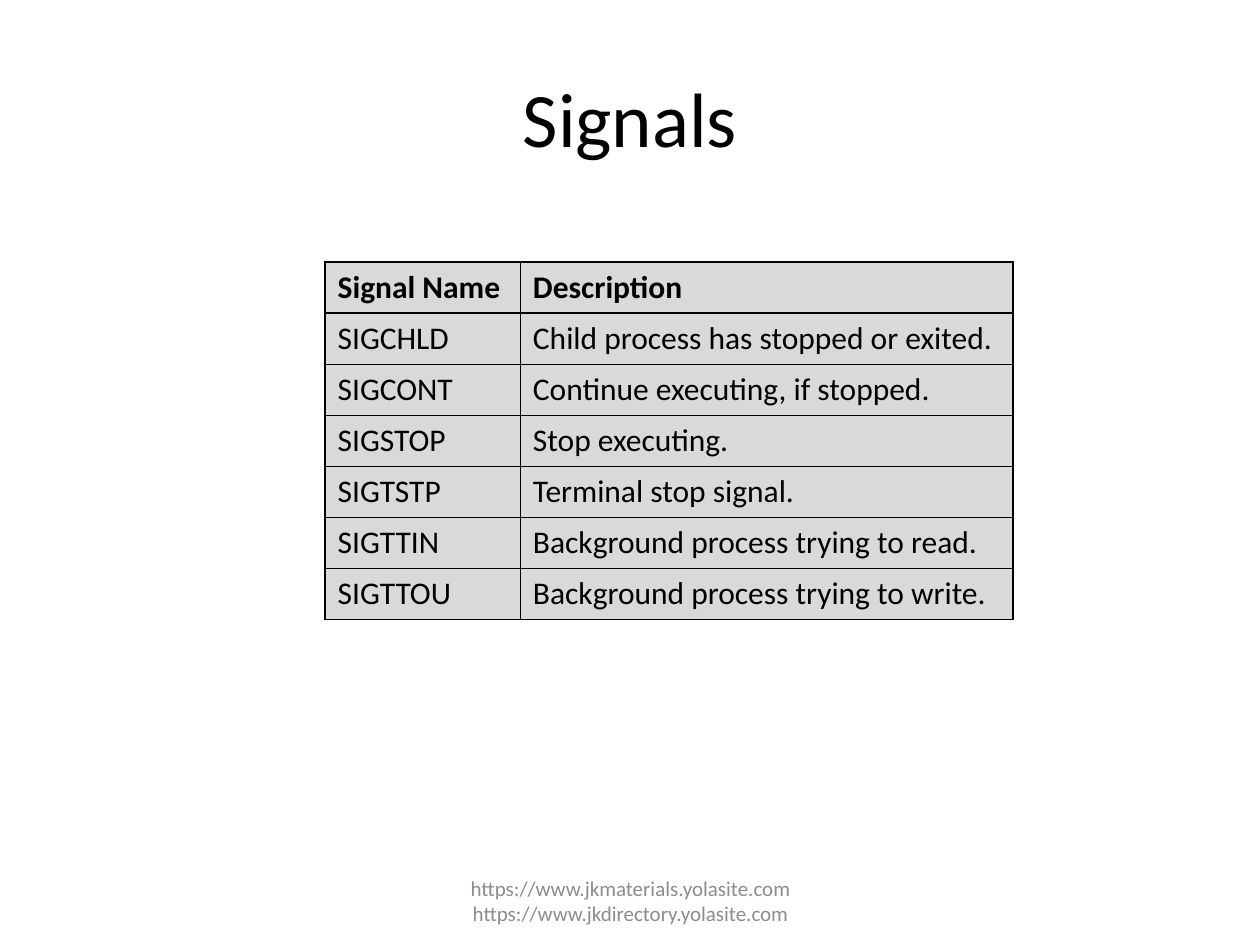
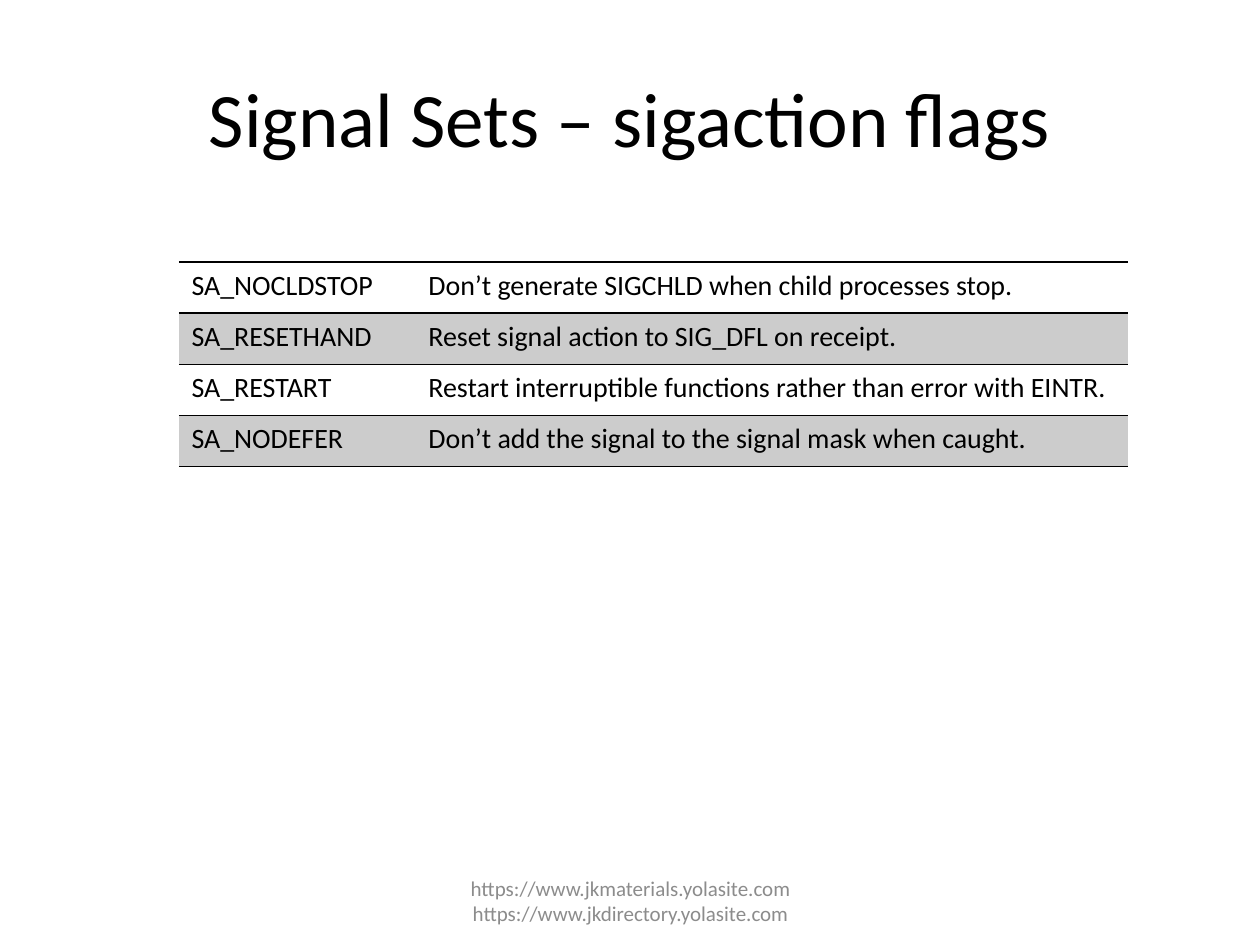
from lxml.etree import SubElement
from pptx import Presentation
from pptx.dml.color import RGBColor
from pptx.enum.text import MSO_ANCHOR, PP_ALIGN
from pptx.oxml.ns import qn
from pptx.util import Inches, Pt

WIDTH, HEIGHT = Inches(10), Inches(7.5)
FONT = "Calibri"
BLACK = RGBColor(0x00, 0x00, 0x00)
FOOTER_GREY = RGBColor(0x8C, 0x8C, 0x8C)
CELL_GREY = RGBColor(0xD9, 0xD9, 0xD9)
BAND_GREY = RGBColor(0xCC, 0xCC, 0xCC)

TITLE_BOX = (5, 4, 90, 16.67)
FOOTER_BOX = (34.2, 92.67, 31.7, 5.33)
TABLE_TOP = 27.73
ROW_HEIGHT = 5.41
FOOTER = "https://www.jkmaterials.yolasite.com https://www.jkdirectory.yolasite.com"

SIGNALS = [
    ("Signal Name", "Description"),
    ("SIGCHLD", "Child process has stopped or exited."),
    ("SIGCONT", "Continue executing, if stopped."),
    ("SIGSTOP", "Stop executing."),
    ("SIGTSTP", "Terminal stop signal."),
    ("SIGTTIN", "Background process trying to read."),
    ("SIGTTOU", "Background process trying to write."),
]
FLAGS = [
    ("SA_NOCLDSTOP", "Don’t generate SIGCHLD when child processes stop."),
    ("SA_RESETHAND", "Reset signal action to SIG_DFL on receipt."),
    ("SA_RESTART", "Restart interruptible functions rather than error with EINTR."),
    ("SA_NODEFER", "Don’t add the signal to the signal mask when caught."),
]


def across(percent):
    """Return a share of the slide width."""
    return int(WIDTH * percent / 100)


def down(percent):
    """Return a share of the slide height."""
    return int(HEIGHT * percent / 100)


def place(box):
    """Turn left, top, width and height in percent into lengths."""
    left, top, width, height = box
    return across(left), down(top), across(width), down(height)


def write(tf, text, size, color=BLACK, bold=False, align=PP_ALIGN.LEFT):
    """Write one formatted run into the first paragraph."""
    p = tf.paragraphs[0]
    p.alignment = align
    r = p.add_run()
    r.text = text
    r.font.name = FONT
    r.font.size = Pt(size)
    r.font.bold = bold
    r.font.color.rgb = color


def set_borders(cell, **widths):
    """Draw the cell edges L, R, T and B; a width of 0 hides an edge."""
    tc_pr = cell._tc.get_or_add_tcPr()
    for edge in "LRTB":
        width = widths[edge]
        ln = SubElement(tc_pr, qn(f"a:ln{edge}"), w=str(Pt(width)))
        if width:
            fill = SubElement(ln, qn("a:solidFill"))
            SubElement(fill, qn("a:srgbClr"), val=str(BLACK))
        else:
            SubElement(ln, qn("a:noFill"))


def add_slide(prs, title):
    """Add a slide with the shared title and footer."""
    s = prs.slides.add_slide(prs.slide_layouts[5])
    sp = s.shapes.title
    sp.left, sp.top, sp.width, sp.height = place(TITLE_BOX)
    sp.text_frame.vertical_anchor = MSO_ANCHOR.MIDDLE
    write(sp.text_frame, title, 44, align=PP_ALIGN.CENTER)
    tf = s.shapes.add_textbox(*place(FOOTER_BOX)).text_frame
    tf.word_wrap = True
    tf.vertical_anchor = MSO_ANCHOR.MIDDLE
    write(tf, FOOTER, 12, FOOTER_GREY, align=PP_ALIGN.CENTER)
    return s


def add_table(s, rows, left, columns, size, fills, rules, side, header=False):
    """Add a table whose fills cycle by row, with given rule widths."""
    box = (left, TABLE_TOP, sum(columns), ROW_HEIGHT * len(rows))
    table = s.shapes.add_table(len(rows), len(columns), *place(box)).table
    table.first_row = header
    table.horz_banding = False
    for column, width in zip(table.columns, columns):
        column.width = across(width)
    for i, row in enumerate(rows):
        for j, text in enumerate(row):
            cell = table.cell(i, j)
            set_borders(cell, L=side, R=side, T=rules[i], B=rules[i + 1])
            color = fills[i % len(fills)]
            if color is None:
                cell.fill.background()
            else:
                cell.fill.solid()
                cell.fill.fore_color.rgb = color
            write(cell.text_frame, text, size, bold=header and i == 0)


def main():
    """Build both slides and save them."""
    prs = Presentation()
    prs.slide_width, prs.slide_height = WIDTH, HEIGHT
    s = add_slide(prs, "Signals")
    add_table(s, SIGNALS, 25.8, (15.5, 39.1), 18, [CELL_GREY],
              [1] * (len(SIGNALS) + 1), 1, header=True)
    s = add_slide(prs, "Signal Sets – sigaction flags")
    add_table(s, FLAGS, 14.2, (18.8, 56.5), 16, [None, BAND_GREY],
              [1.5, 1.5, 1, 1, 1], 0)
    prs.save("out.pptx")


if __name__ == "__main__":
    main()
